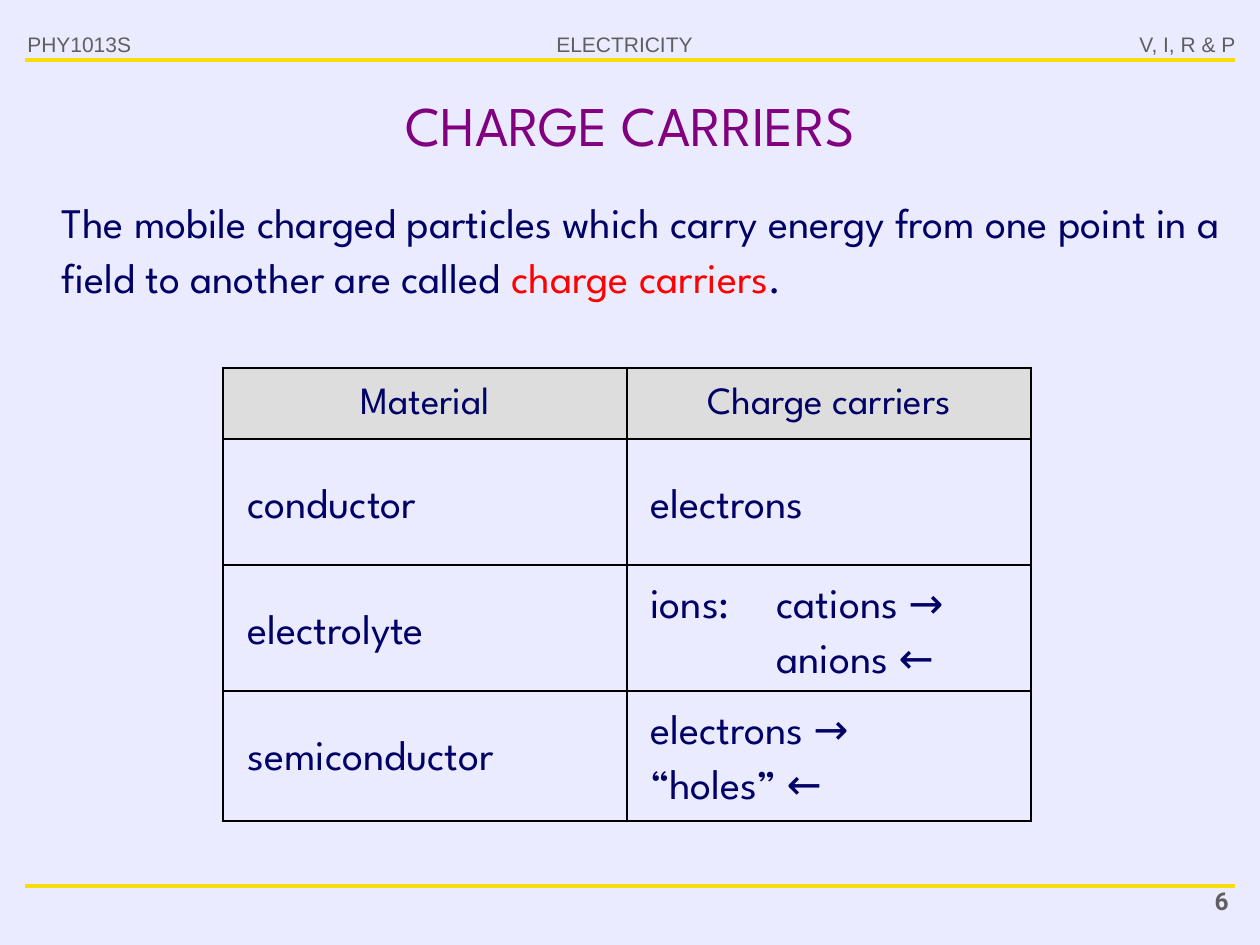
from dataclasses import dataclass

import pptx
import pptx.dml.color
import pptx.enum.shapes
import pptx.enum.text
import pptx.oxml.ns
import pptx.util
from lxml import etree

EMU_PER_PX = 914400 / 126
COLORS = {
    "background": "EBEBFF", "rule": "F8DC0E", "header": "5F5F5F",
    "title": "800080", "text": "000066", "term": "FF0000",
    "heading_fill": "DDDDDD", "border": "000000",
}
BODY_FONT = "League Spartan"
ALIGN = pptx.enum.text.PP_ALIGN
MIDDLE = pptx.enum.text.MSO_ANCHOR.MIDDLE


@dataclass(frozen=True)
class Style:
    font: str
    size: int
    color: str
    align: ALIGN = ALIGN.LEFT
    bold: bool = False
    spacing: float = 1.0


@dataclass(frozen=True)
class Label:
    text: str
    left: int
    top: int
    width: int
    height: int
    style: Style
    wrap: bool = False


def px(length: int) -> int:
    return round(length * EMU_PER_PX)


def rgb(name: str) -> pptx.dml.color.RGBColor:
    return pptx.dml.color.RGBColor.from_string(COLORS[name])


def place(shape, left: int, top: int, width: int, height: int) -> None:
    shape.left, shape.top = px(left), px(top)
    shape.width, shape.height = px(width), px(height)


def add_tab_stop(para, position: int) -> None:
    stops = etree.SubElement(para._p.get_or_add_pPr(), pptx.oxml.ns.qn("a:tabLst"))
    etree.SubElement(stops, pptx.oxml.ns.qn("a:tab"), pos=str(px(position)), algn="l")


def format_para(para, style: Style) -> None:
    para.alignment = style.align
    para.line_spacing = style.spacing
    para.space_before = pptx.util.Pt(0)
    para.font.name = style.font
    para.font.size = pptx.util.Pt(style.size)
    para.font.bold = style.bold
    para.font.color.rgb = rgb(style.color)


def add_label(page, label: Label) -> None:
    box = page.shapes.add_textbox(
        px(label.left), px(label.top), px(label.width), px(label.height))
    box.text_frame.word_wrap = label.wrap
    para = box.text_frame.paragraphs[0]
    para.text = label.text
    if "\t" in label.text:
        add_tab_stop(para, 126)
    format_para(para, label.style)


def add_rule(page, y: int) -> None:
    rule = page.shapes.add_connector(
        pptx.enum.shapes.MSO_CONNECTOR.STRAIGHT, px(25), px(y), px(1235), px(y))
    rule.line.color.rgb = rgb("rule")
    rule.line.width = pptx.util.Pt(1.75)
    etree.SubElement(rule._element.spPr, pptx.oxml.ns.qn("a:effectLst"))


def set_borders(cell, widths: dict[str, float]) -> None:
    """Give the cell a border for each side, in points."""
    properties = cell._tc.get_or_add_tcPr()
    for side, width in widths.items():
        line = etree.SubElement(properties, pptx.oxml.ns.qn(f"a:ln{side}"),
                                w=str(pptx.util.Pt(width)))
        fill = etree.SubElement(line, pptx.oxml.ns.qn("a:solidFill"))
        etree.SubElement(fill, pptx.oxml.ns.qn("a:srgbClr"), val=COLORS["border"])


def add_carrier_table(page, headings: list[str], heights: list[int]) -> None:
    rows, columns = len(heights), len(headings)
    frame = page.shapes.add_table(
        rows, columns, px(223), px(368), px(404 * columns), px(sum(heights)))
    table = frame.table
    for column in table.columns:
        column.width = px(404)
    for r, height in enumerate(heights):
        table.rows[r].height = px(height)
        for c in range(columns):
            cell = table.cell(r, c)
            outer = {"L": c == 0, "R": c == columns - 1,
                     "T": r == 0, "B": r == rows - 1}
            set_borders(cell, {side: 1.5 if edge else 1 for side, edge in outer.items()})
            if r > 0:
                cell.fill.background()
                continue
            cell.fill.solid()
            cell.fill.fore_color.rgb = rgb("heading_fill")
            cell.vertical_anchor = MIDDLE
            para = cell.text_frame.paragraphs[0]
            para.text = headings[c]
            format_para(para, Style(BODY_FONT, 22, "text", ALIGN.CENTER, spacing=1.1))


def fill_title(page) -> None:
    title = page.shapes.title
    place(title, 63, 79, 1134, 91)
    title.text_frame.text = "CHARGE CARRIERS"
    title.text_frame.vertical_anchor = MIDDLE
    title.text_frame.auto_size = pptx.enum.text.MSO_AUTO_SIZE.NONE
    format_para(title.text_frame.paragraphs[0],
                Style(BODY_FONT, 32, "title", ALIGN.CENTER))


def fill_body(page) -> None:
    body = page.placeholders[1]
    place(body, 24, 185, 1210, 123)
    body.text_frame.auto_size = pptx.enum.text.MSO_AUTO_SIZE.NONE
    para = body.text_frame.paragraphs[0]
    properties = para._p.get_or_add_pPr()
    properties.set("marL", str(px(25)))
    properties.set("indent", "0")
    etree.SubElement(properties, pptx.oxml.ns.qn("a:buNone"))
    for text, color in (
        ("The mobile charged particles which carry energy from one point "
         "in a field to another are called ", "text"),
        ("charge carriers", "term"),
        (".", "text"),
    ):
        span = para.add_run()
        span.text = text
        span.font.color.rgb = rgb(color)
    format_para(para, Style(BODY_FONT, 24, "text", spacing=1.1))


def main() -> None:
    deck = pptx.Presentation()
    deck.slide_width, deck.slide_height = px(1260), px(945)
    page = deck.slides.add_slide(deck.slide_layouts[1])
    page.background.fill.solid()
    page.background.fill.fore_color.rgb = rgb("background")

    for y in (60, 886):
        add_rule(page, y)
    for label in (
        Label("PHY1013S", 15, 25, 149, 40, Style("Arial", 12, "header"), True),
        Label("ELECTRICITY", 534, 25, 181, 38,
              Style("Arial", 12, "header", ALIGN.CENTER)),
        Label("V, I, R & P", 1108, 25, 140, 38,
              Style("Arial", 12, "header", ALIGN.RIGHT)),
        Label("6", 1111, 880, 130, 47,
              Style("Roboto", 14, "header", ALIGN.RIGHT, bold=True), True),
    ):
        add_label(page, label)

    fill_title(page)
    fill_body(page)
    add_carrier_table(page, ["Material", "Charge carriers"], [71, 126, 126, 130])

    entry = Style(BODY_FONT, 24, "text", spacing=1.1)
    for text, left, top, width, height in (
        ("conductor", 235, 465, 236, 68),
        ("electrolyte", 235, 591, 243, 68),
        ("semiconductor", 235, 717, 333, 68),
        ("electrons", 638, 465, 218, 68),
        ("ions:\tcations →\v\tanions ←", 638, 565, 363, 123),
        ("electrons →\v“holes” ←", 638, 691, 280, 123),
    ):
        add_label(page, Label(text, left, top, width, height, entry))

    deck.save("out.pptx")


if __name__ == "__main__":
    main()
